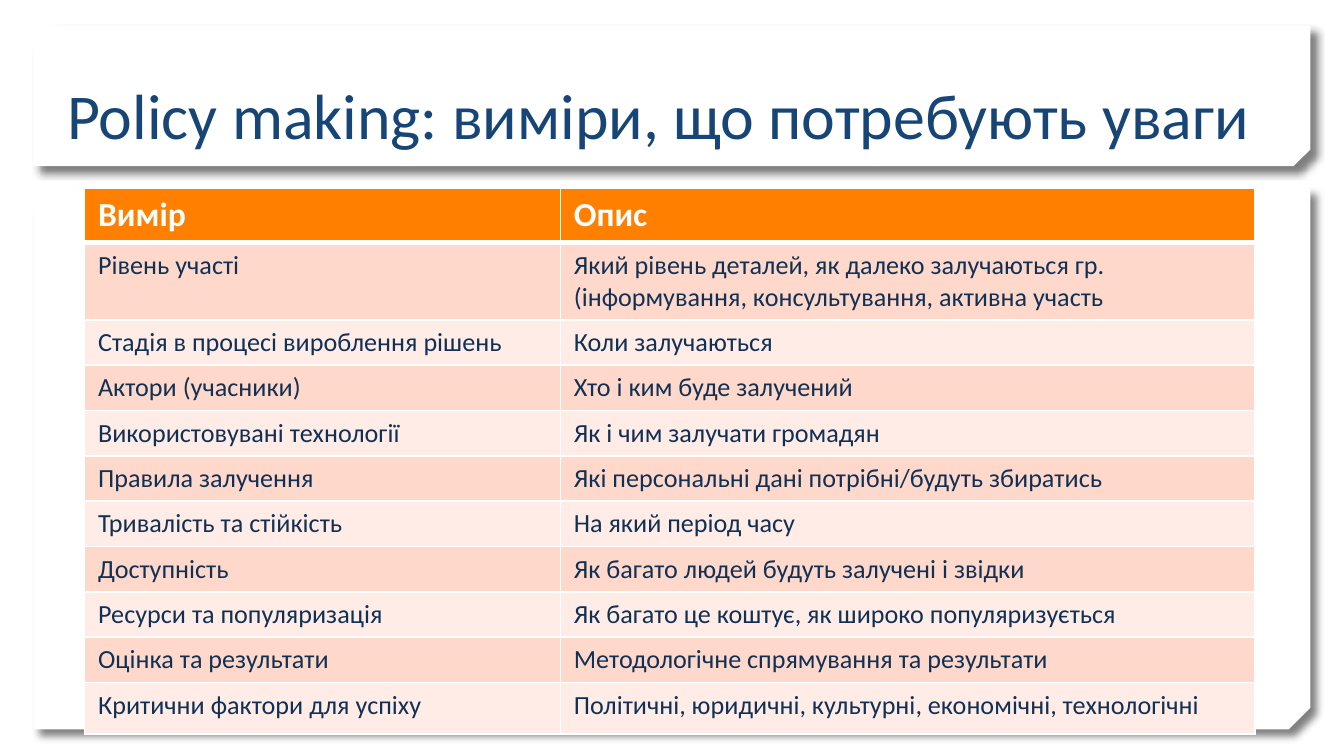
from lxml.etree import SubElement
from pptx import Presentation
from pptx.dml.color import RGBColor
from pptx.enum.shapes import MSO_SHAPE
from pptx.enum.text import MSO_ANCHOR, MSO_AUTO_SIZE, PP_ALIGN
from pptx.oxml import parse_xml
from pptx.oxml.ns import nsdecls, qn
from pptx.util import Inches, Pt

THEME = {
    "font": "Calibri",
    "white": RGBColor.from_string("FFFFFF"),
    "title": RGBColor.from_string("174576"),
    "text": RGBColor.from_string("103154"),
    "header": RGBColor.from_string("FF7F01"),
    "bands": [RGBColor.from_string("FFD8CC"), RGBColor.from_string("FFECE7")],
    "title_size": Pt(34.2),
    "header_size": Pt(18),
    "body_size": Pt(14),
}
ROWS = [
    ("Вимір", "Опис"),
    ("Рівень участі", "Який рівень деталей, як далеко залучаються гр. "
                      "(інформування, консультування, активна участь"),
    ("Стадія в процесі вироблення рішень", "Коли залучаються"),
    ("Актори (учасники)", "Хто і ким буде залучений"),
    ("Використовувані технології", "Як і чим залучати громадян"),
    ("Правила залучення", "Які персональні дані потрібні/будуть збиратись"),
    ("Тривалість та стійкість", "На який період часу"),
    ("Доступність", "Як багато людей будуть залучені і звідки"),
    ("Ресурси та популяризація", "Як багато це коштує, як широко популяризується"),
    ("Оцінка та результати", "Методологічне спрямування та результати"),
    ("Критични фактори для успіху",
     "Політичні, юридичні, культурні, економічні, технологічні"),
]

# Widescreen slide, 16:9
prs = Presentation()
prs.slide_width, prs.slide_height = Inches(10), Inches(10 * 9 / 16)
s = prs.slides.add_slide(prs.slide_layouts[5])


def box(left, top, width, height):
    """Turn percentages of the slide into a position and size."""
    w, h = prs.slide_width, prs.slide_height
    return [int(share * side / 100)
            for share, side in zip((left, top, width, height), (w, h, w, h))]


def style(p, size, color, bold=False):
    p.font.name, p.font.size, p.font.bold = THEME["font"], size, bold
    p.font.color.rgb = color


# Background panels with snipped corners, placed behind the title
title = s.shapes.title
for top, height, snip in ((24.9, 71.6, 0.04), (3.4, 18.6, 0.12)):
    panel = s.shapes.add_shape(MSO_SHAPE.SNIP_2_DIAG_RECTANGLE,
                               *box(2.5, top, 95, height))
    panel.adjustments[0], panel.adjustments[1] = 0, snip
    panel.fill.solid()
    panel.fill.fore_color.rgb = THEME["white"]
    panel.line.fill.background()
    spPr = panel._element.spPr
    spPr.find(qn("a:xfrm")).set("flipV", "1")
    spPr.append(parse_xml(
        f'<a:effectLst {nsdecls("a")}><a:outerShdw blurRad="{Pt(4)}" dist="{Pt(5)}" '
        'dir="2700000" algn="tl" rotWithShape="0"><a:srgbClr val="000000">'
        '<a:alpha val="50000"/></a:srgbClr></a:outerShdw></a:effectLst>'))
    title._element.addprevious(panel._element)

# Title
title.left, title.top, title.width, title.height = box(4, 4.3, 91.4, 16.7)
tf = title.text_frame
tf.text = "Policy making: виміри, що потребують уваги"
tf.vertical_anchor, tf.auto_size = MSO_ANCHOR.BOTTOM, MSO_AUTO_SIZE.NONE
p = tf.paragraphs[0]
p.alignment = PP_ALIGN.LEFT
style(p, THEME["title_size"], THEME["title"])

# Table of dimensions
x, y, w, h = box(6.3, 24.9, 87.1, 71.3)
table = s.shapes.add_table(len(ROWS), 2, x, y, w, h).table
for column, share in zip(table.columns, (3.54, 5.17)):
    column.width = int(w * share / 8.71)
heights = [7, 10] + [6] * 8 + [6.8]
for row, share in zip(table.rows, heights):
    row.height = box(0, 0, 0, share)[3]

for i, texts in enumerate(ROWS):
    header = i == 0
    for j, text in enumerate(texts):
        cell = table.cell(i, j)
        cell.text = text
        cell.fill.solid()
        cell.fill.fore_color.rgb = THEME["header"] if header else THEME["bands"][(i - 1) % 2]
        style(cell.text_frame.paragraphs[0],
              THEME["header_size"] if header else THEME["body_size"],
              THEME["white"] if header else THEME["text"], header)
        # White borders, thicker between header and body
        tcPr = cell._tc.get_or_add_tcPr()
        for k, side in enumerate(("lnL", "lnR", "lnT", "lnB")):
            thick = (i, side) in ((0, "lnB"), (1, "lnT"))
            ln = tcPr.makeelement(qn(f"a:{side}"), {"w": str(Pt(3 if thick else 1))})
            fill = SubElement(ln, qn("a:solidFill"))
            SubElement(fill, qn("a:srgbClr"), val=str(THEME["white"]))
            tcPr.insert(k, ln)

prs.save("out.pptx")
